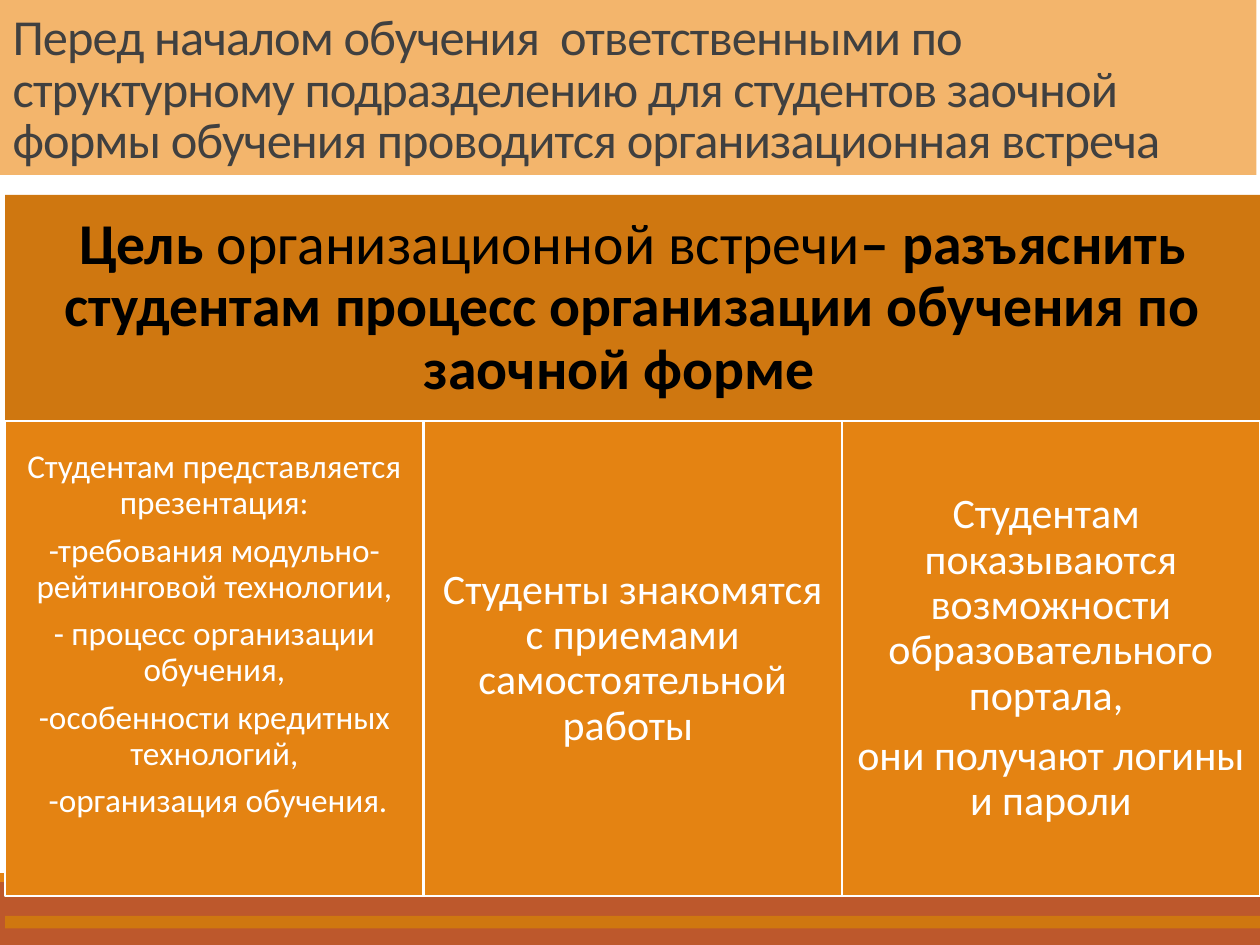
from pptx import Presentation
from pptx.dml.color import RGBColor
from pptx.enum import shapes, text
from pptx.util import Pt

WHITE = RGBColor(0xFF, 0xFF, 0xFF)
BLACK = RGBColor(0, 0, 0)
GRAY = RGBColor(0x40, 0x40, 0x40)
RUST = RGBColor(0xBD, 0x58, 0x2C)
ORANGE = RGBColor(0xE4, 0x83, 0x12)
AMBER = RGBColor(0xCF, 0x77, 0x10)
PEACH = RGBColor(0xF3, 0xB5, 0x6C)
FACE = "Calibri"

TITLE = ("Перед началом обучения  ответственными по структурному подразделению "
         "для студентов заочной формы обучения проводится организационная встреча")
GOAL = [("Цель ", True), ("организационной встречи", False),
        ("– разъяснить студентам процесс организации обучения по заочной форме  ", True)]
# Each column: text size, inset, bottom inset, paragraphs
COLUMNS = [
    (19, 6, 33, ["Студентам представляется презентация:",
                 "-требования модульно-рейтинговой технологии,",
                 "- процесс организации обучения,",
                 "-особенности кредитных технологий,",
                 " -организация обучения."]),
    (24, 7, 7, ["Студенты знакомятся с приемами самостоятельной работы "]),
    (24, 7, 7, ["Студентам  показываются возможности образовательного портала, ",
                "они получают логины и пароли"]),
]


def apply(obj, **values):
    for name, value in values.items():
        setattr(obj, name, value)


def place(shape, box):
    names = ("left", "top", "width", "height")
    apply(shape, **{n: Pt(v) for n, v in zip(names, box)})


def block(slide, box, fill, line=None):
    rect = slide.shapes.add_shape(shapes.MSO_SHAPE.RECTANGLE, *map(Pt, box))
    rect.shadow.inherit = False
    rect.fill.solid()
    rect.fill.fore_color.rgb = fill
    if line is None:
        rect.line.fill.background()
    else:
        rect.line.color.rgb = line
        rect.line.width = Pt(1.25)
    return rect


def write(shape, paras, size, color, inset, low):
    """Fill a shape with centred paragraphs, each a list of (words, bold)."""
    frame = shape.text_frame
    apply(frame, word_wrap=True, vertical_anchor=text.MSO_ANCHOR.MIDDLE,
          margin_left=Pt(inset), margin_right=Pt(inset),
          margin_top=Pt(inset), margin_bottom=Pt(low))
    for i, runs in enumerate(paras):
        para = frame.add_paragraph() if i else frame.paragraphs[0]
        apply(para, alignment=text.PP_ALIGN.CENTER, line_spacing=0.9,
              space_before=Pt(0), space_after=Pt(round(size * 0.35, 1)))
        for words, bold in runs:
            run = para.add_run()
            run.text = words
            apply(run.font, name=FACE, size=Pt(size), bold=bold)
            run.font.color.rgb = color


def footer(slide, box):
    left, top, width, height = box
    block(slide, (left, top + 5, width, height - 5), RUST)
    block(slide, (left, top, width, 5), ORANGE)


def heading(slide, box):
    title = slide.shapes.title
    place(title, box)
    title.fill.solid()
    title.fill.fore_color.rgb = PEACH
    frame = title.text_frame
    apply(frame, text=TITLE, word_wrap=True, auto_size=text.MSO_AUTO_SIZE.NONE,
          vertical_anchor=text.MSO_ANCHOR.BOTTOM)
    para = frame.paragraphs[0]
    apply(para, alignment=text.PP_ALIGN.LEFT, line_spacing=0.85, space_before=Pt(0))
    run = para.runs[0]
    apply(run.font, name=FACE, size=Pt(28.8))
    run.font.color.rgb = GRAY
    run._r.get_or_add_rPr().set("spc", "-50")


def diagram(slide, box):
    """Goal banner, a row of equal columns under it and a base strip."""
    left, top, width, height = box
    head, body, strip = 129.3, 271.4, 7.2
    goal = block(slide, (left, top, width, head), AMBER)
    write(goal, [GOAL], 33, BLACK, 10, 10)
    step = width / len(COLUMNS)
    for i, (size, inset, low, lines) in enumerate(COLUMNS):
        cell = block(slide, (left + i * step, top + head, step, body), ORANGE, WHITE)
        write(cell, [[(line, False)] for line in lines], size, WHITE, inset, low)
    block(slide, (left, top + height - strip, width, strip), AMBER)


def main():
    deck = Presentation()
    apply(deck, slide_width=Pt(720), slide_height=Pt(540))
    slide = deck.slides.add_slide(deck.slide_layouts[5])
    footer(slide, (0, 499, 720, 41))
    heading(slide, (0, 0, 718, 100))
    diagram(slide, (3, 111.4, 717, 419.2))
    deck.save("out.pptx")


if __name__ == "__main__":
    main()
